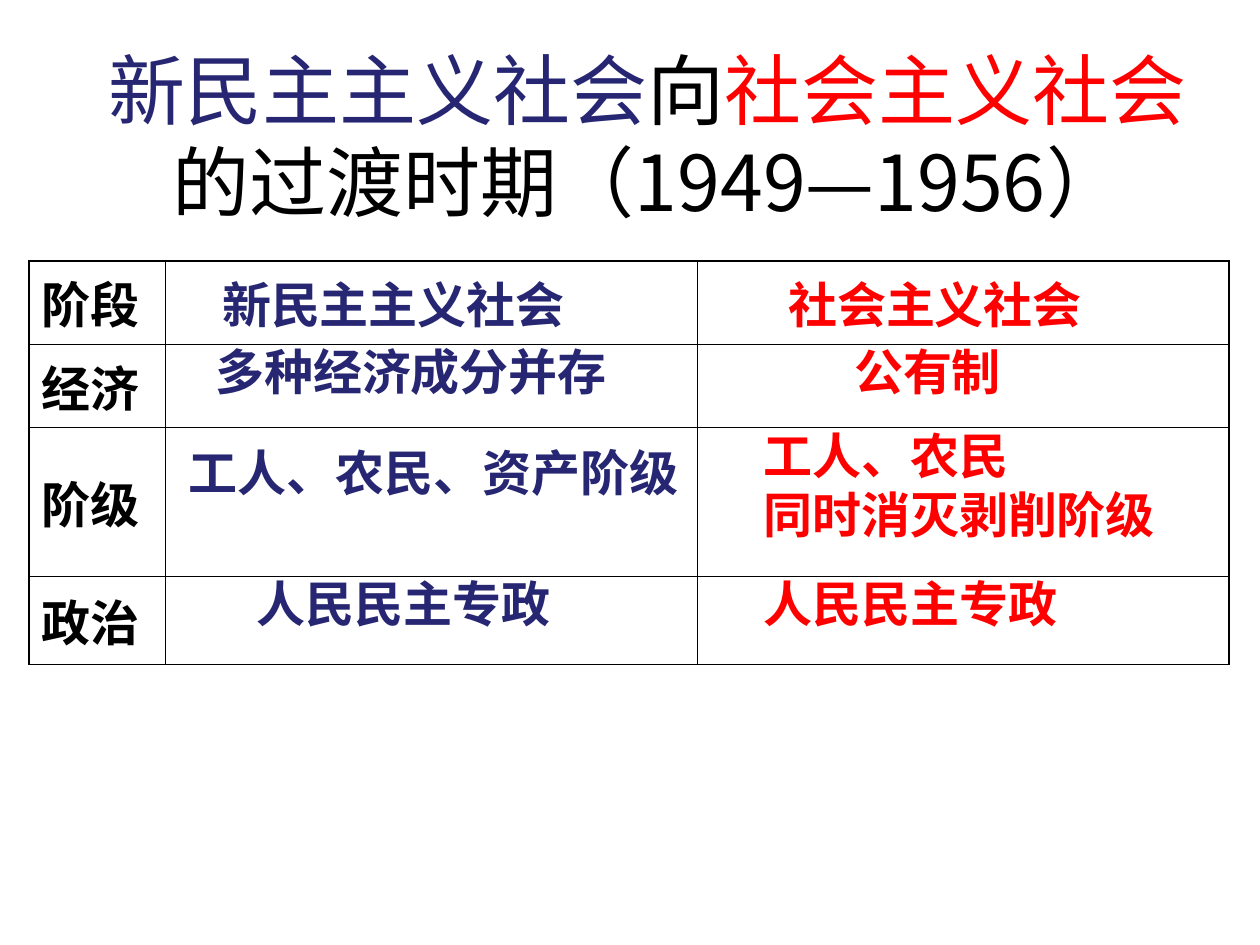
import dataclasses
import itertools

import lxml.etree
import pptx
import pptx.dml.color
import pptx.enum.text
import pptx.oxml.ns
import pptx.util

Cm = pptx.util.Cm
Anchor = pptx.enum.text.MSO_ANCHOR
Color = pptx.dml.color.RGBColor
qn = pptx.oxml.ns.qn


@dataclasses.dataclass(frozen=True)
class Theme:
    black: Color = Color(0, 0, 0)
    navy: Color = Color(0x26, 0x26, 0x73)
    red: Color = Color(0xFF, 0, 0)
    title_font: str = "Noto Sans CJK SC"
    body_font: str = "Arial"
    title_size: int = 44
    body_size: int = 28
    border: float = 1


THEME = Theme()


@dataclasses.dataclass(frozen=True)
class Label:
    """A table answer floating above the grid; lengths in centimetres."""
    text: str
    color: Color
    left: float
    top: float
    width: float
    height: float


LABELS = [
    Label("多种经济成分并存", THEME.navy, 4.09, 6.76, 8.86, 1.45),
    Label("公有制", THEME.red, 16.97, 6.76, 8.86, 1.45),
    Label("工人、农民、资产阶级", THEME.navy, 3.56, 8.79, 10.92, 1.45),
    Label("工人、农民\n同时消灭剥削阶级", THEME.red, 15.14, 8.45, 8.86, 2.64),
    Label("人民民主专政", THEME.navy, 4.93, 11.43, 15.54, 2.21),
    Label("人民民主专政", THEME.red, 15.14, 11.43, 15.54, 2.21),
]

TITLE = [
    ("新民主主义社会", THEME.navy),
    ("向", THEME.black),
    ("社会主义社会", THEME.red),
    ("的过渡时期（1949—1956）", THEME.black),
]

ROW_NAMES = ["阶段", "经济", "阶级", "政治"]
ROW_HEIGHTS = [1.68, 1.68, 3, 1.78]
COLUMN_WIDTHS = [2.76, 10.72, 10.72]
# Column heading, colour and left inset
HEADINGS = [("新民主主义社会", THEME.navy, 1.14), ("社会主义社会", THEME.red, 1.83)]


def style_span(span, color: Color, size: int, font: str, bold: bool) -> None:
    span.font.size = pptx.util.Pt(size)
    span.font.name = font
    span.font.bold = bold
    span.font.color.rgb = color
    east_asian = lxml.etree.SubElement(span.font._element, qn("a:ea"))
    east_asian.set("typeface", THEME.title_font)


def style_body(frame, color: Color) -> None:
    for para in frame.paragraphs:
        for span in para.runs:
            style_span(span, color, THEME.body_size, THEME.body_font, True)


def add_title(page) -> None:
    box = page.shapes.add_textbox(Cm(1.63), Cm(1.12), Cm(22.86), Cm(3.18))
    frame = box.text_frame
    frame.word_wrap = True
    frame.vertical_anchor = Anchor.MIDDLE
    para = frame.paragraphs[0]
    para.alignment = pptx.enum.text.PP_ALIGN.CENTER
    for text, color in TITLE:
        span = para.add_run()
        span.text = text
        style_span(span, color, THEME.title_size, THEME.title_font, False)


def add_label(page, label: Label) -> None:
    box = page.shapes.add_textbox(
        Cm(label.left), Cm(label.top), Cm(label.width), Cm(label.height))
    frame = box.text_frame
    frame.word_wrap = True
    frame.text = label.text
    style_body(frame, label.color)


def style_cell(cell) -> None:
    properties = cell._tc.get_or_add_tcPr()
    for side in ("a:lnL", "a:lnR", "a:lnT", "a:lnB"):
        line = lxml.etree.SubElement(properties, qn(side))
        line.set("w", str(pptx.util.Pt(THEME.border)))
        fill = lxml.etree.SubElement(line, qn("a:solidFill"))
        lxml.etree.SubElement(fill, qn("a:srgbClr")).set("val", str(THEME.black))
    cell.fill.background()


def fill_cell(cell, text: str, color: Color) -> None:
    cell.text_frame.text = text
    style_body(cell.text_frame, color)


def add_stage_table(page) -> None:
    table = page.shapes.add_table(
        len(ROW_HEIGHTS), len(COLUMN_WIDTHS), Cm(0.58), Cm(5.26),
        Cm(sum(COLUMN_WIDTHS)), Cm(sum(ROW_HEIGHTS))).table
    table.first_row = table.horz_banding = False
    for column, width in zip(table.columns, COLUMN_WIDTHS):
        column.width = Cm(width)
    for row, height in zip(table.rows, ROW_HEIGHTS):
        row.height = Cm(height)
    for row, column in itertools.product(
            range(len(ROW_HEIGHTS)), range(len(COLUMN_WIDTHS))):
        style_cell(table.cell(row, column))
    for row, name in enumerate(ROW_NAMES):
        cell = table.cell(row, 0)
        cell.vertical_anchor = Anchor.MIDDLE
        fill_cell(cell, name, THEME.black)
    for column, (text, color, inset) in enumerate(HEADINGS, start=1):
        cell = table.cell(0, column)
        cell.margin_left = Cm(inset)
        fill_cell(cell, text, color)


def main() -> None:
    deck = pptx.Presentation()
    deck.slide_width, deck.slide_height = Cm(25.4), Cm(19.05)
    page = deck.slides.add_slide(deck.slide_layouts[6])

    # Title, grid, then the answers over it
    add_title(page)
    add_stage_table(page)
    for label in LABELS:
        add_label(page, label)

    deck.save("out.pptx")


if __name__ == "__main__":
    main()
